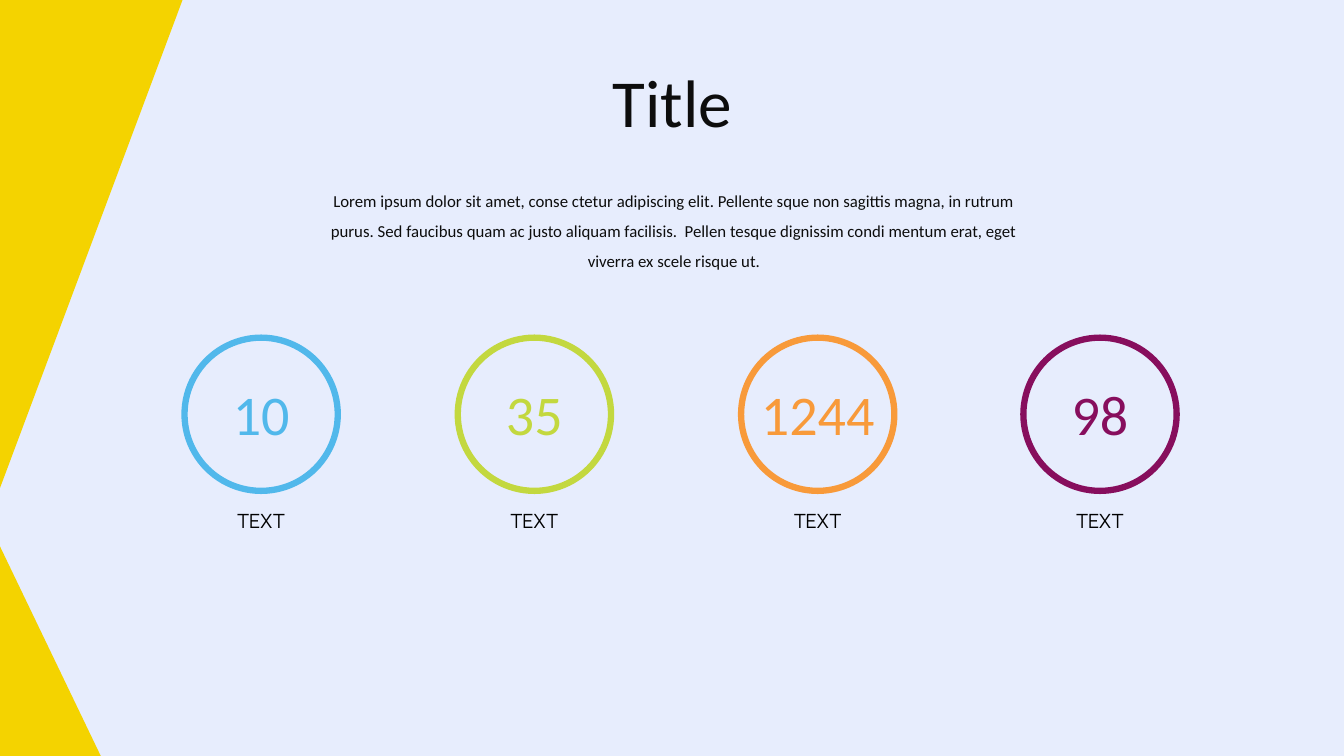
from dataclasses import dataclass

from pptx import Presentation
from pptx.dml.color import RGBColor
from pptx.enum.shapes import MSO_SHAPE
from pptx.enum.text import MSO_AUTO_SIZE, PP_ALIGN
from pptx.util import Inches, Pt

OVAL = MSO_SHAPE.OVAL
RIGHT_TRIANGLE = MSO_SHAPE.RIGHT_TRIANGLE
CENTER = PP_ALIGN.CENTER
GROW = MSO_AUTO_SIZE.SHAPE_TO_FIT_TEXT


@dataclass(frozen=True)
class Theme:
    background: str = "E7EDFD"
    accent: str = "F4D300"
    ink: str = "0D0D0D"
    label: str = "000000"
    blue: str = "51B8EB"
    green: str = "C3D83F"
    orange: str = "F89A3A"
    purple: str = "870E5D"
    body_font: str = "Calibri"
    label_font: str = "Manrope"
    title_size: int = 48
    number_size: int = 40
    label_size: int = 14
    intro_size: int = 12
    ring_width: float = 4.5


theme = Theme()

prs = Presentation()
prs.slide_width = Inches(13.33)
prs.slide_height = Inches(7.5)
slide = prs.slides.add_slide(prs.slide_layouts[6])
slide.background.fill.solid()
slide.background.fill.fore_color.rgb = RGBColor.from_string(theme.background)


def add_centered_text(text, box, size, color, font=theme.body_font, spacing=None):
    frame = slide.shapes.add_textbox(*map(Inches, box)).text_frame
    frame.word_wrap = True
    frame.auto_size = GROW
    paragraph = frame.paragraphs[0]
    paragraph.alignment = CENTER
    paragraph.line_spacing = spacing
    run = paragraph.add_run()
    run.text = text
    for key, value in {"name": font, "size": Pt(size)}.items():
        setattr(run.font, key, value)
    run.font.color.rgb = RGBColor.from_string(color)


# Corner triangles: the upper one is mirrored top to bottom
for corner_box, mirrored in [((0, 5.42, 1, 2.08), False), ((0, 0, 1.81, 4.84), True)]:
    corner = slide.shapes.add_shape(RIGHT_TRIANGLE, *map(Inches, corner_box))
    corner.shadow.inherit = False
    corner.fill.solid()
    corner.fill.fore_color.rgb = RGBColor.from_string(theme.accent)
    corner.line.fill.background()
    if mirrored:
        corner.rotation = 180
        corner._element.spPr.xfrm.set("flipH", "1")

add_centered_text("Title", (3.61, 0.55, 6.12, 0.91), theme.title_size, theme.ink)
add_centered_text(
    "Lorem ipsum dolor sit amet, conse ctetur adipiscing elit. Pellente sque non "
    "sagittis magna, in rutrum purus. Sed faucibus quam ac justo aliquam facilisis.  "
    "Pellen tesque dignissim condi mentum erat, eget viverra ex scele risque ut.",
    (3.16, 1.74, 7.05, 1.01), theme.intro_size, theme.ink, spacing=1.5)

# Key figures: number, colour and centre of each ring
figures = [
    ("10", theme.blue, 2.59),
    ("35", theme.green, 5.3),
    ("1244", theme.orange, 8.11),
    ("98", theme.purple, 10.91),
]
ring_size, number_width, label_width = 1.52, 1.41, 1.19

for number, color, center in figures:
    ring = slide.shapes.add_shape(
        OVAL, Inches(center - ring_size / 2), Inches(3.35),
        Inches(ring_size), Inches(ring_size))
    ring.shadow.inherit = False
    ring.fill.background()
    ring.line.color.rgb = RGBColor.from_string(color)
    ring.line.width = Pt(theme.ring_width)
    add_centered_text(number, (center - number_width / 2, 3.72, number_width, 0.77),
                      theme.number_size, color)
    add_centered_text("TEXT", (center - label_width / 2, 5, label_width, 0.34),
                      theme.label_size, theme.label, theme.label_font)

prs.save("out.pptx")
